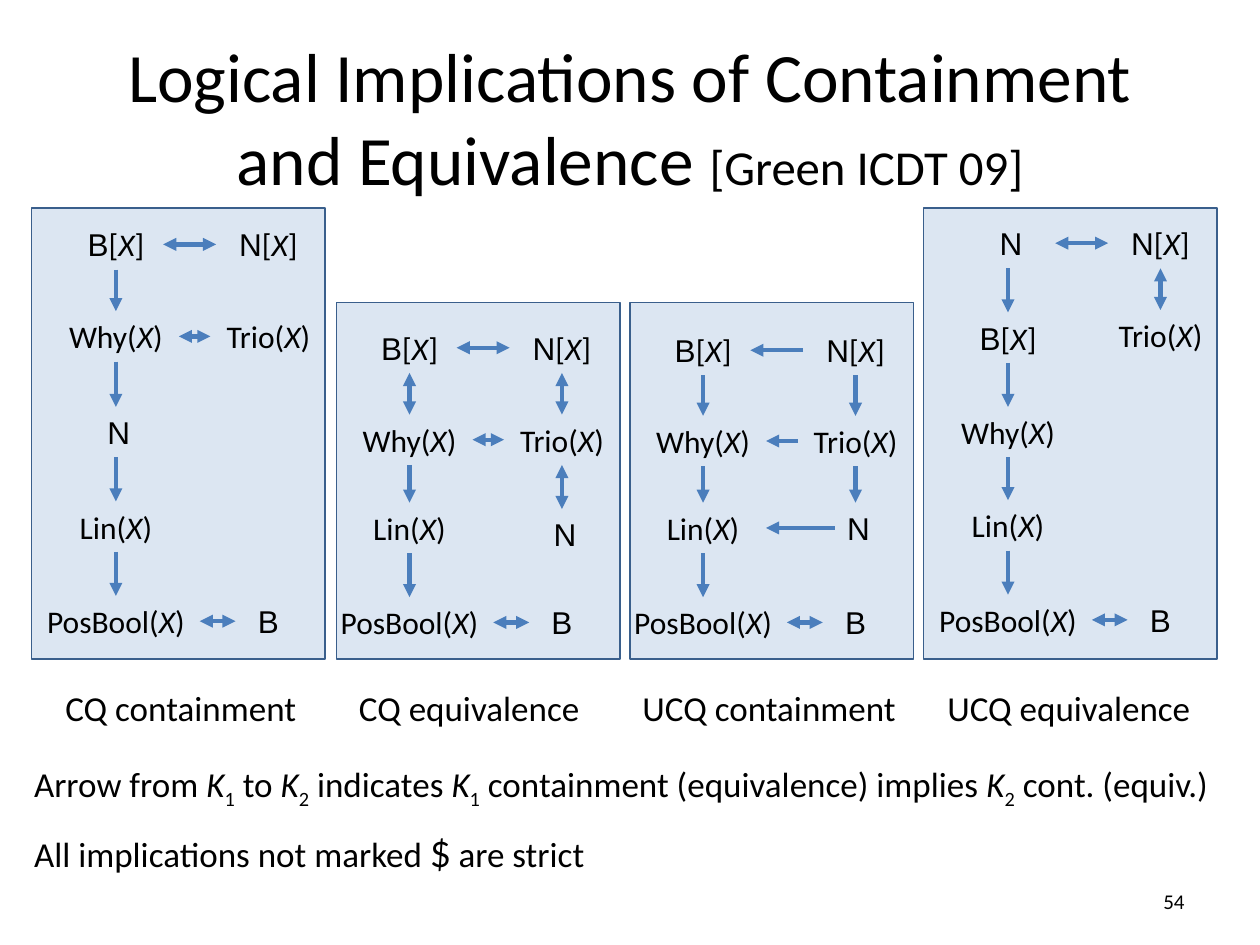
from dataclasses import dataclass
from itertools import pairwise
from typing import Any

import pptx
import pptx.dml.color
import pptx.enum.shapes
import pptx.enum.text
import pptx.oxml
import pptx.oxml.ns
import pptx.util

Inches = pptx.util.Inches
Pt = pptx.util.Pt
Align = pptx.enum.text.PP_ALIGN
Anchor = pptx.enum.text.MSO_ANCHOR
Fit = pptx.enum.text.MSO_AUTO_SIZE
NS = pptx.oxml.ns.nsdecls("a")
TOP, LEFT, BOTTOM, RIGHT = range(4)


@dataclass
class Run:
    text: str
    font: str = "Calibri"
    slant: bool = False
    base: int = 0
    size: float = 0


@dataclass
class Label:
    runs: list[Run]
    width: float


@dataclass
class Link:
    start: str
    end: str
    both: bool = True
    gap: float = 0


@dataclass
class Panel:
    left: float
    top: float
    width: float
    title: str
    title_x: float
    title_w: float
    main: dict[str, float]
    side: dict[str, float]
    links: list[Link]
    twin: bool = False


def of_x(head: str, ends: str, font: str = "Calibri") -> list[Run]:
    first = [Run(head, font), Run(ends[0])] if font != "Calibri" else [Run(head + ends[0])]
    return first + [Run("X", slant=True), Run(ends[1])]


def term(num: str) -> list[Run]:
    return [Run("K", slant=True), Run(num, base=-25000)]


LABELS = {
    "NX": Label(of_x("N", "[]", "Arial"), 0.83),
    "BX": Label(of_x("B", "[]", "Arial"), 0.75),
    "Trio": Label(of_x("Trio", "()"), 0.92),
    "Why": Label(of_x("Why", "()"), 1),
    "Lin": Label(of_x("Lin", "()"), 1),
    "Pos": Label(of_x("PosBool", "()"), 1.33),
    "B": Label([Run("B", "Arial")], 0.52),
    "N": Label([Run("N", "Arial")], 0.33),
}

PANELS = [
    Panel(0.25, 1.65, 2.33, "CQ containment", 0.42, 2.17,
          {"BX": 1.74, "Why": 2.47, "N": 3.23, "Lin": 3.98, "Pos": 4.73},
          {"NX": 1.74, "Trio": 2.47, "B": 4.73},
          [Link("NX", "BX"), Link("Trio", "Why"), Link("B", "Pos")]),
    Panel(2.67, 2.4, 2.25, "CQ equivalence", 2.75, 2.58,
          {"BX": 2.56, "Why": 3.29, "Lin": 3.99, "Pos": 4.74},
          {"NX": 2.56, "Trio": 3.29, "N": 4.04, "B": 4.74},
          [Link("NX", "BX"), Link("Trio", "Why"), Link("B", "Pos"),
           Link("NX", "Trio"), Link("Trio", "N")], True),
    Panel(5, 2.4, 2.25, "UCQ containment", 5, 3.08,
          {"BX": 2.58, "Why": 3.3, "Lin": 3.99, "Pos": 4.74},
          {"NX": 2.58, "Trio": 3.3, "N": 3.99, "B": 4.74},
          [Link("NX", "BX", False), Link("Trio", "Why", False), Link("N", "Lin", False),
           Link("B", "Pos"), Link("NX", "Trio", False), Link("Trio", "N", False)]),
    Panel(7.33, 1.65, 2.33, "UCQ equivalence", 7.42, 2.58,
          {"N": 1.73, "BX": 2.48, "Why": 3.23, "Lin": 3.97, "Pos": 4.72},
          {"NX": 1.73, "Trio": 2.46, "B": 4.72},
          [Link("NX", "N", gap=0.21), Link("B", "Pos"), Link("NX", "Trio")]),
]


def color(code: str) -> pptx.dml.color.RGBColor:
    return pptx.dml.color.RGBColor.from_string(code)


def place(shape: Any, left: float, top: float, width: float, height: float) -> None:
    shape.left, shape.top = Inches(left), Inches(top)
    shape.width, shape.height = Inches(width), Inches(height)


def write(para: Any, runs: list[Run], size: float, align: Any = Align.LEFT) -> None:
    para.alignment = align
    for item in runs:
        run = para.add_run()
        run.text = item.text
        run.font.name = item.font
        run.font.size = Pt(item.size or size)
        run.font.color.rgb = color("000000")
        if item.slant:
            run.font.italic = True
        if item.base:
            run._r.get_or_add_rPr().set("baseline", str(item.base))


def add_text(slide: Any, left: float, top: float, width: float, height: float,
             runs: list[Run], size: float, align: Any = Align.LEFT) -> Any:
    box = slide.shapes.add_textbox(*map(Inches, (left, top, width, height)))
    box.text_frame.word_wrap = True
    write(box.text_frame.paragraphs[0], runs, size, align)
    return box


def add_link(slide: Any, nodes: dict[str, Any], main: dict[str, float], link: Link) -> None:
    start, end = nodes[link.start], nodes[link.end]
    if (link.start in main) == (link.end in main):
        sides = BOTTOM, TOP
    else:
        sides = LEFT, RIGHT
    line = slide.shapes.add_connector(pptx.enum.shapes.MSO_CONNECTOR.STRAIGHT, 0, 0, 0, 0)
    line.begin_connect(start, sides[0])
    if link.gap:
        line.end_x = end.left + end.width + Inches(link.gap)
        line.end_y = end.top + end.height // 2
    else:
        line.end_connect(end, sides[1])
    line.line.color.rgb = color("4B7EBC")
    line.line.width = Pt(2.5)
    pen = line.line._get_or_add_ln()
    for tag in ["headEnd", "tailEnd"] if link.both else ["tailEnd"]:
        pen.append(pptx.oxml.parse_xml(f'<a:{tag} {NS} type="triangle"/>'))
    pen.addnext(pptx.oxml.parse_xml(f"<a:effectLst {NS}/>"))


def add_panel(slide: Any, panel: Panel) -> None:
    rect = slide.shapes.add_shape(pptx.enum.shapes.MSO_SHAPE.RECTANGLE, 0, 0, 0, 0)
    place(rect, panel.left, panel.top, panel.width, 5.23 - panel.top)
    rect.shadow.inherit = False
    rect.fill.solid()
    rect.fill.fore_color.rgb = color("DCE6F2")
    rect.line.color.rgb = color("3A5F8C")
    rect.line.width = Pt(0.75)
    mid = {0.25: 0.92, 2.67: 3.25, 5: 5.58, 7.33: 8}[panel.left]
    nodes = {}
    for column, x in [(panel.main, mid), (panel.side, mid + 1.21)]:
        for name, top in column.items():
            label = LABELS[name]
            nodes[name] = add_text(slide, x - label.width / 2, top, label.width, 0.4,
                                   label.runs, 18, Align.CENTER)
    steps = [Link(a, b, panel.twin and i == 0)
             for i, (a, b) in enumerate(pairwise(panel.main))]
    for link in steps + panel.links:
        add_link(slide, nodes, panel.main, link)
    add_text(slide, panel.title_x, 5.4, panel.title_w, 0.44, [Run(panel.title)], 20)


def add_notes(body: Any) -> None:
    place(body, 0.17, 6, 9.83, 0.98)
    frame = body.text_frame
    frame.auto_size = Fit.NONE
    lines = [
        [Run("Arrow from "), *term("1"), Run(" to "), *term("2"), Run(" indicates "),
         *term("1"), Run(" containment (equivalence) implies "), *term("2"),
         Run(" cont. (equiv.)")],
        [Run("All implications not marked "), Run("$", "Lato"), Run(" are strict")],
    ]
    for i, runs in enumerate(lines):
        para = frame.add_paragraph() if i else frame.paragraphs[0]
        write(para, runs, 20)
        para.space_before = Pt(13 * i)
        props = para._p.get_or_add_pPr()
        props.set("marL", "0")
        props.set("indent", "0")
        props.append(pptx.oxml.parse_xml(f"<a:buNone {NS}/>"))


def main() -> None:
    deck = pptx.Presentation()
    deck.slide_width, deck.slide_height = Inches(10), Inches(7.5)
    slide = deck.slides.add_slide(deck.slide_layouts[1])
    title, body = slide.placeholders
    place(title, 0.5, 0.3, 9, 1.25)
    title.text_frame.auto_size = Fit.NONE
    title.text_frame.vertical_anchor = Anchor.MIDDLE
    write(title.text_frame.paragraphs[0],
          [Run("Logical Implications of Containment and Equivalence "),
           Run("[Green ICDT 09]", size=27.9)], 39.6, Align.CENTER)
    for panel in PANELS:
        add_panel(slide, panel)
    add_notes(body)
    page = add_text(slide, 7.17, 6.95, 2.33, 0.4, [Run("54")], 12, Align.RIGHT)
    page.text_frame.vertical_anchor = Anchor.MIDDLE
    deck.save("out.pptx")


if __name__ == "__main__":
    main()
